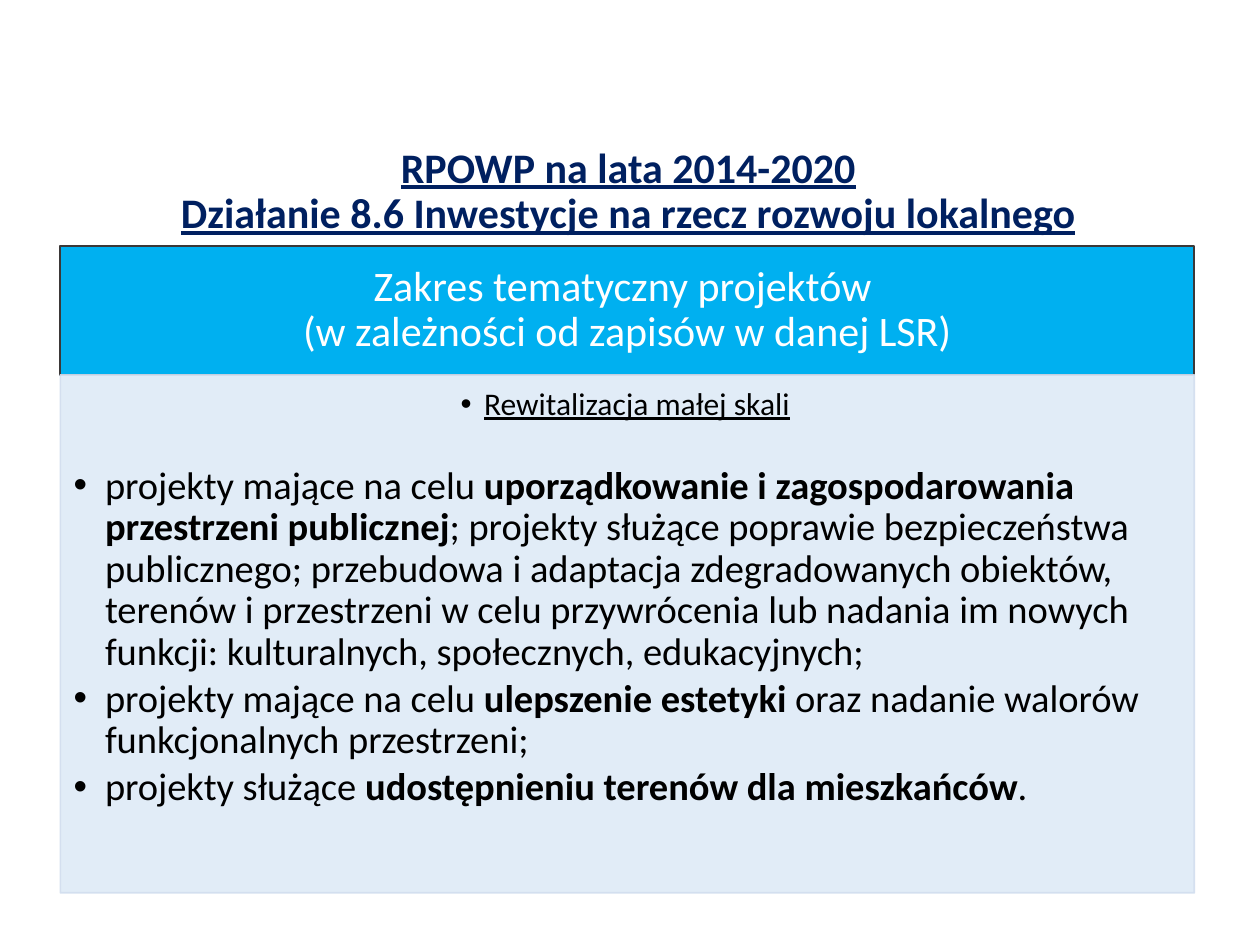
from dataclasses import dataclass

from lxml import etree
from pptx import Presentation
from pptx.dml.color import RGBColor
from pptx.enum.shapes import MSO_SHAPE
from pptx.enum.text import MSO_ANCHOR, MSO_AUTO_SIZE, PP_ALIGN
from pptx.oxml.ns import qn
from pptx.util import Pt

RECTANGLE = MSO_SHAPE.RECTANGLE
MIDDLE, TOP = MSO_ANCHOR.MIDDLE, MSO_ANCHOR.TOP
CENTER, LEFT = PP_ALIGN.CENTER, PP_ALIGN.LEFT
NO_AUTOFIT = MSO_AUTO_SIZE.NONE

FONT = "Calibri"
COLORS = {
    "title": "002060",
    "header": "00B0F0",
    "header_line": "3B3838",
    "panel": "DEEBF7",
    "panel_line": "D2DEEF",
    "white": "FFFFFF",
    "black": "000000",
}
PANEL_LEFT, PANEL_WIDTH = 34.5, 648
HEADER_TOP, HEADER_HEIGHT = 140.5, 73.75


@dataclass
class Bullet:
    spans: list[tuple[str, bool]]  # text, bold
    size: float = 22
    indent: float = 18
    align: PP_ALIGN = LEFT
    underline: bool = False
    space_after: float = 3


BULLETS = [
    Bullet([("Rewitalizacja małej skali", False)], size=18, indent=13.5,
           align=CENTER, underline=True, space_after=25),
    Bullet([
        ("projekty mające na celu ", False),
        ("uporządkowanie i zagospodarowania przestrzeni publicznej", True),
        ("; projekty służące poprawie bezpieczeństwa publicznego; przebudowa "
         "i adaptacja zdegradowanych obiektów, terenów i przestrzeni w celu "
         "przywrócenia lub nadania im nowych funkcji: kulturalnych, "
         "społecznych, edukacyjnych;", False),
    ]),
    Bullet([
        ("projekty mające na celu ", False),
        ("ulepszenie estetyki ", True),
        ("oraz nadanie walorów funkcjonalnych przestrzeni;", False),
    ]),
    Bullet([
        ("projekty służące ", False),
        ("udostępnieniu terenów dla mieszkańców", True),
        (".", False),
    ]),
]


def place(box, left: float, top: float, width: float, height: float) -> None:
    box.left, box.top, box.width, box.height = map(Pt, (left, top, width, height))


def paint(box, fill: str, line: str, opacity: int = 100) -> None:
    box.fill.solid()
    box.line.width = Pt(1)
    for part, color in ((box.fill, fill), (box.line.fill, line)):
        part.solid()
        part.fore_color.rgb = RGBColor.from_string(COLORS[color])
    if opacity < 100:
        for color_element in box._element.spPr.iter(qn("a:srgbClr")):
            etree.SubElement(color_element, qn("a:alpha"), val=str(opacity * 1000))


def set_frame(frame, anchor: MSO_ANCHOR, margins: tuple[float, ...]) -> None:
    frame.word_wrap = True
    frame.auto_size = NO_AUTOFIT
    frame.vertical_anchor = anchor
    (frame.margin_left, frame.margin_top,
     frame.margin_right, frame.margin_bottom) = map(Pt, margins)


def format_paragraph(para, size: float, color: str, align: PP_ALIGN) -> None:
    para.alignment = align
    para.line_spacing = 0.9
    para.space_before = Pt(0)
    para.font.name = FONT
    para.font.size = Pt(size)
    para.font.color.rgb = RGBColor.from_string(COLORS[color])


def add_bullet(para, bullet: Bullet) -> None:
    properties = para._p.get_or_add_pPr()
    properties.set("marL", str(Pt(bullet.indent)))
    properties.set("indent", str(-Pt(bullet.indent)))
    format_paragraph(para, bullet.size, "black", bullet.align)
    para.space_after = Pt(bullet.space_after)
    para.font.underline = bullet.underline
    for text, bold in bullet.spans:
        span = para.add_run()
        span.text = text
        span.font.bold = bold


def main() -> None:
    deck = Presentation()
    deck.slide_width, deck.slide_height = Pt(720), Pt(540)
    page = deck.slides.add_slide(deck.slide_layouts[1])

    # Title
    title = page.shapes.title
    place(title, 27.5, 79, 663, 61.5)
    set_frame(title.text_frame, MIDDLE, (7.2, 3.6, 7.2, 3.6))
    para = title.text_frame.paragraphs[0]
    para.text = ("RPOWP na lata 2014-2020\v"
                 "Działanie 8.6 Inwestycje na rzecz rozwoju lokalnego")
    format_paragraph(para, 24, "title", CENTER)
    para.font.bold = para.font.underline = True

    # Header band
    header = page.shapes.add_shape(RECTANGLE, 0, 0, 0, 0)
    place(header, PANEL_LEFT, HEADER_TOP, PANEL_WIDTH, HEADER_HEIGHT)
    header.shadow.inherit = False
    paint(header, "header", "header_line")
    set_frame(header.text_frame, MIDDLE, (13.5, 8, 13.5, 8))
    para = header.text_frame.paragraphs[0]
    para.text = ("Zakres tematyczny projektów \v"
                 "(w zależności od zapisów w danej LSR)")
    format_paragraph(para, 24, "white", CENTER)

    # Bulleted panel, in front of the header's lower edge
    body = page.placeholders[1]
    page.shapes._spTree.append(body._element)
    place(body, PANEL_LEFT, HEADER_TOP + HEADER_HEIGHT, PANEL_WIDTH, 296)
    paint(body, "panel", "panel_line", opacity=90)
    frame = body.text_frame
    set_frame(frame, TOP, (7.5, 7.5, 10, 11.5))
    for number, bullet in enumerate(BULLETS):
        add_bullet(frame.add_paragraph() if number else frame.paragraphs[0], bullet)

    deck.save("out.pptx")


if __name__ == "__main__":
    main()
